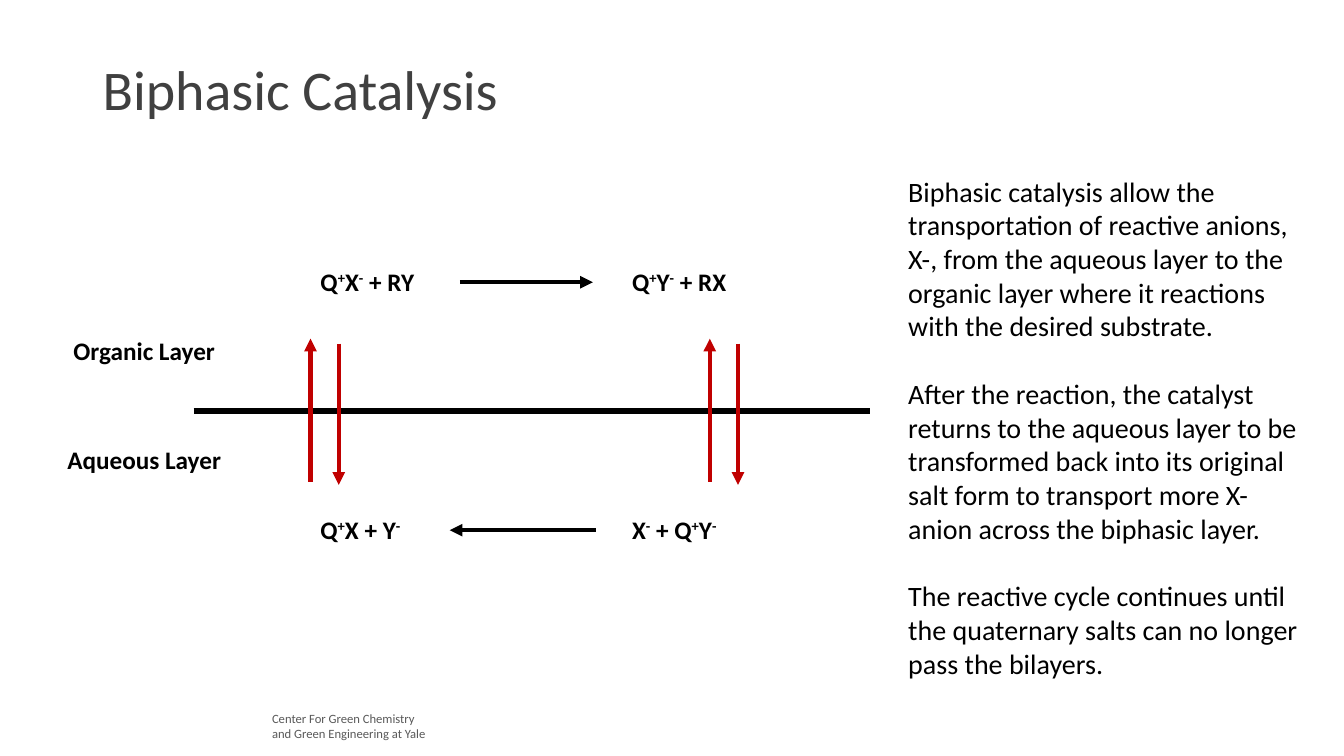
from lxml import etree
from pptx import Presentation
from pptx.dml.color import RGBColor
from pptx.enum import shapes, text
from pptx.oxml import ns
from pptx.util import Inches, Pt

BLACK = RGBColor(0x00, 0x00, 0x00)
RED = RGBColor(0xC0, 0x00, 0x00)
TITLE_GRAY = RGBColor(0x40, 0x40, 0x40)
FOOTER_GRAY = RGBColor(0x59, 0x59, 0x59)
FONT = "Calibri"
SUPERSCRIPT_MARK = "^"


def add_text(slide, box, paragraphs, size=18, color=BLACK, bold=False, wrap=True,
             anchor=text.MSO_ANCHOR.TOP, line_spacing=None, gap=0):
    """Add a text box; text between a pair of marks is raised as superscript."""
    frame = slide.shapes.add_textbox(*map(Inches, box)).text_frame
    frame.word_wrap = wrap
    frame.vertical_anchor = anchor
    for index, content in enumerate(paragraphs):
        paragraph = frame.paragraphs[0] if index == 0 else frame.add_paragraph()
        if line_spacing:
            paragraph.line_spacing = line_spacing
        if index:
            paragraph.space_before = Pt(gap)
        for position, part in enumerate(content.split(SUPERSCRIPT_MARK)):
            if not part:
                continue
            run = paragraph.add_run()
            run.text = part
            run.font.name = FONT
            run.font.size = Pt(size)
            run.font.bold = bold
            run.font.color.rgb = color
            if position % 2:
                run._r.get_or_add_rPr().set("baseline", "30000")


def add_line(slide, start, end, color=BLACK, width=3, arrow=True):
    """Draw a straight line, with an arrowhead at its end if asked."""
    line = slide.shapes.add_connector(
        shapes.MSO_CONNECTOR.STRAIGHT, *map(Inches, (*start, *end)))
    line.line.color.rgb = color
    line.line.width = Pt(width)
    if arrow:
        head = etree.SubElement(line.line._get_or_add_ln(), ns.qn("a:tailEnd"))
        head.set("type", "triangle")
    etree.SubElement(line._element.spPr, ns.qn("a:effectLst"))


def add_title(slide, box):
    """Place the slide title in its box."""
    add_text(slide, box, ["Biphasic Catalysis"], size=40, color=TITLE_GRAY,
             anchor=text.MSO_ANCHOR.MIDDLE, line_spacing=0.9)


def add_cycle(slide, box):
    """Draw the catalytic cycle across the two layers."""
    left, top, width, height = box
    label_height = 0.4
    bottom = top + height - label_height
    boundary = top + 1.49
    first, second = left + 2.51, left + 5.6

    add_line(slide, (left + 1.35, boundary), (left + width, boundary),
             width=4.5, arrow=False)
    labels = [
        ("Aqueous Layer", left, boundary + 0.28, 1.74),
        ("Organic Layer", left + 0.06, boundary - 0.8, 1.62),
        ("Q^+^X^-^ + RY", first, top, 1.15),
        ("Q^+^Y^-^ + RX", second, top, 1.15),
        ("Q^+^X + Y^-^", first, bottom, 1.04),
        ("X^-^ + Q^+^Y^-^", second, bottom, 1.08),
    ]
    for content, x, y, label_width in labels:
        add_text(slide, (x, y, label_width, label_height), [content],
                 bold=True, wrap=False)

    for x in (first, first + 3.96):
        add_line(slide, (x, boundary + 0.7), (x, boundary - 0.72), RED)
        add_line(slide, (x + 0.28, boundary - 0.67), (x + 0.28, boundary + 0.73), RED)

    organic, aqueous = top + 0.21, bottom + 0.21
    add_line(slide, (left + 3.99, organic), (left + 5.31, organic))
    add_line(slide, (left + 5.34, aqueous), (left + 3.89, aqueous))


def add_explanation(slide, box):
    """Write the explanation beside the cycle."""
    add_text(slide, box, [
        "Biphasic catalysis allow the transportation of reactive anions, X-, from the "
        "aqueous layer to the organic layer where it reactions with the desired substrate.",
        "After the reaction, the catalyst returns to the aqueous layer to be transformed "
        "back into its original salt form to transport more X- anion across the biphasic "
        "layer.",
        "The reactive cycle continues until the quaternary salts can no longer pass the "
        "bilayers.",
    ], size=20, gap=24.4)


def add_footer(slide, box):
    """Write the name of the center at the foot of the slide."""
    add_text(slide, box, ["Center For Green Chemistry", "and Green Engineering at Yale"],
             size=9, color=FOOTER_GRAY)


def main():
    """Build the slide and save it."""
    presentation = Presentation()
    presentation.slide_width = Inches(13.33)
    presentation.slide_height = Inches(7.5)
    slide = presentation.slides.add_slide(presentation.slide_layouts[6])
    add_footer(slide, (2.6, 7, 1.86, 0.4))
    add_title(slide, (0.92, 0.19, 11.5, 1.45))
    add_cycle(slide, (0.57, 2.59, 8.06, 2.86))
    add_explanation(slide, (8.91, 1.68, 4.06, 5.15))
    presentation.save("out.pptx")


if __name__ == "__main__":
    main()
